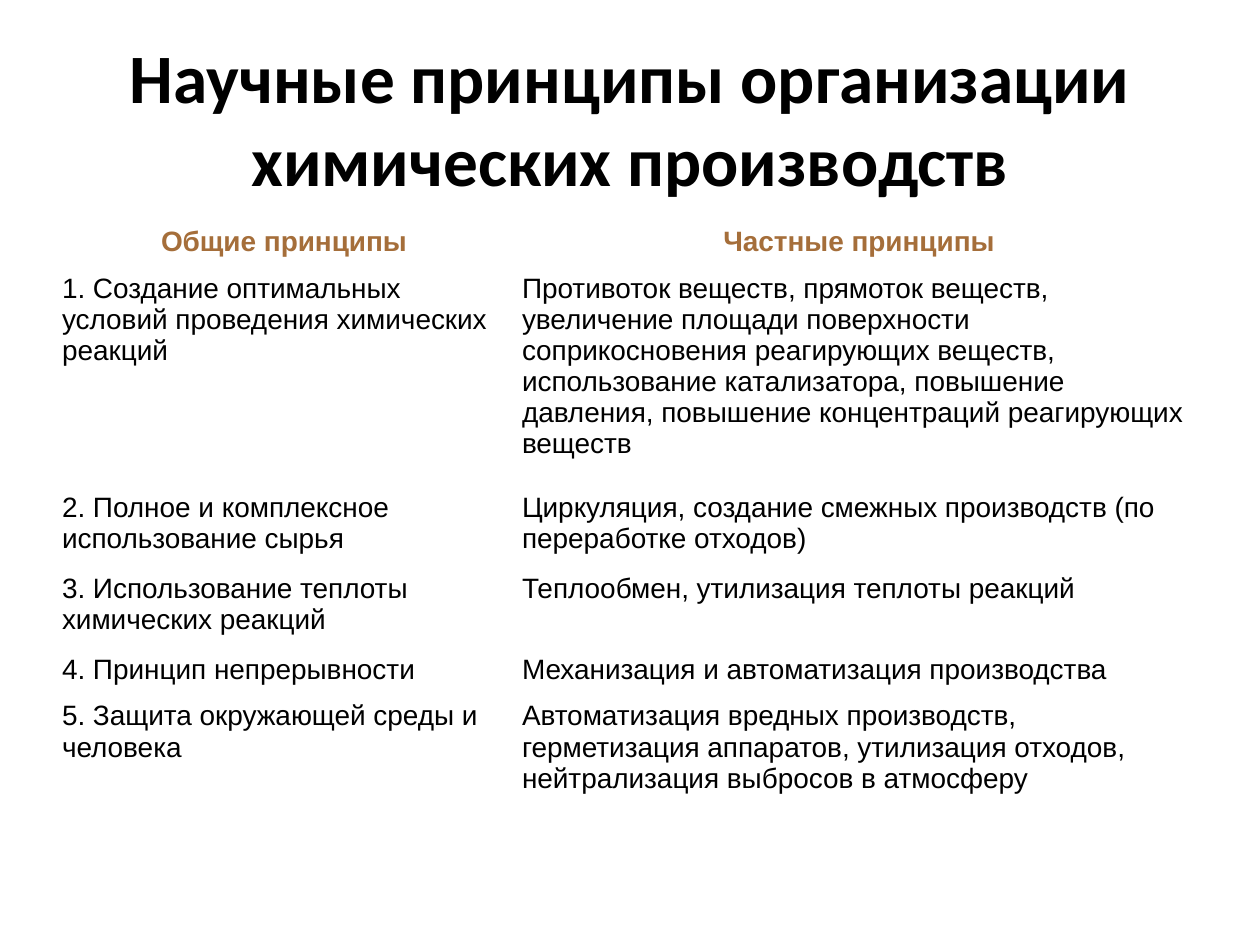
from pptx import Presentation
from pptx import util as u
from pptx.dml.color import RGBColor
from pptx.enum import text

EMU_PER_PX = 914400 / 126
COLORS = {"background": "FFFFFF", "body": "000000", "heading": "A56E3A"}
TITLE = "Научные принципы организации\vхимических производств"
COLUMN_WIDTHS = (460, 690)
ROW_HEIGHTS = (47, 219, 81, 81, 47, 150)
PRINCIPLES = (
    ("Общие принципы", "Частные принципы"),
    ("1. Создание оптимальных условий проведения химических реакций",
     "Противоток веществ, прямоток веществ, увеличение площади поверхности "
     "соприкосновения реагирующих веществ, использование катализатора, повышение "
     "давления, повышение концентраций реагирующих веществ"),
    ("2. Полное и комплексное использование сырья",
     "Циркуляция, создание смежных производств (по переработке отходов)"),
    ("3. Использование теплоты химических реакций",
     "Теплообмен, утилизация теплоты реакций"),
    ("4. Принцип непрерывности",
     "Механизация и автоматизация производства"),
    ("5. Защита окружающей среды и человека",
     "Автоматизация вредных производств, герметизация аппаратов, утилизация "
     "отходов, нейтрализация выбросов в атмосферу"),
)


def px(length):
    """Turn a length in px into EMU."""
    return u.Emu(round(length * EMU_PER_PX))


def format_text(text_frame, font_name, size, color, bold, alignment):
    """Format every run and paragraph of a text frame."""
    for paragraph in text_frame.paragraphs:
        paragraph.alignment = alignment
        for run in paragraph.runs:
            run.font.name = font_name
            run.font.size = u.Pt(size)
            run.font.bold = bold
            run.font.color.rgb = RGBColor.from_string(COLORS[color])


def set_title(slide):
    """Place and format the title placeholder."""
    title = slide.shapes.title
    title.left, title.top, title.width, title.height = map(px, (63, 38, 1134, 158))
    title.text_frame.text = TITLE
    title.text_frame.vertical_anchor = text.MSO_ANCHOR.MIDDLE
    format_text(title.text_frame, "Calibri", 39.6, "body", True, text.PP_ALIGN.CENTER)


def fill_cell(cell, words, is_heading):
    """Write one table cell with its margins and fill."""
    cell.margin_left = cell.margin_right = px(8)
    cell.margin_top = cell.margin_bottom = px(6)
    cell.fill.solid()
    cell.fill.fore_color.rgb = RGBColor.from_string(COLORS["background"])
    cell.text_frame.text = words
    color = "heading" if is_heading else "body"
    alignment = text.PP_ALIGN.CENTER if is_heading else text.PP_ALIGN.LEFT
    format_text(cell.text_frame, "Arial", 16, color, is_heading, alignment)


def add_principles_table(slide):
    """Add the table of general and particular principles."""
    frame = slide.shapes.add_table(
        len(ROW_HEIGHTS), len(COLUMN_WIDTHS), px(54), px(220),
        px(sum(COLUMN_WIDTHS)), px(sum(ROW_HEIGHTS)))
    table = frame.table
    table.horz_banding = False
    for column, width in zip(table.columns, COLUMN_WIDTHS):
        column.width = px(width)
    for row_index, (row, height) in enumerate(zip(table.rows, ROW_HEIGHTS)):
        row.height = px(height)
        for cell, words in zip(row.cells, PRINCIPLES[row_index]):
            fill_cell(cell, words, row_index == 0)


def main():
    """Build and save the slide."""
    presentation = Presentation()
    presentation.slide_width, presentation.slide_height = px(1260), px(945)
    slide = presentation.slides.add_slide(presentation.slide_layouts[5])
    set_title(slide)
    add_principles_table(slide)
    presentation.save("out.pptx")


if __name__ == "__main__":
    main()
